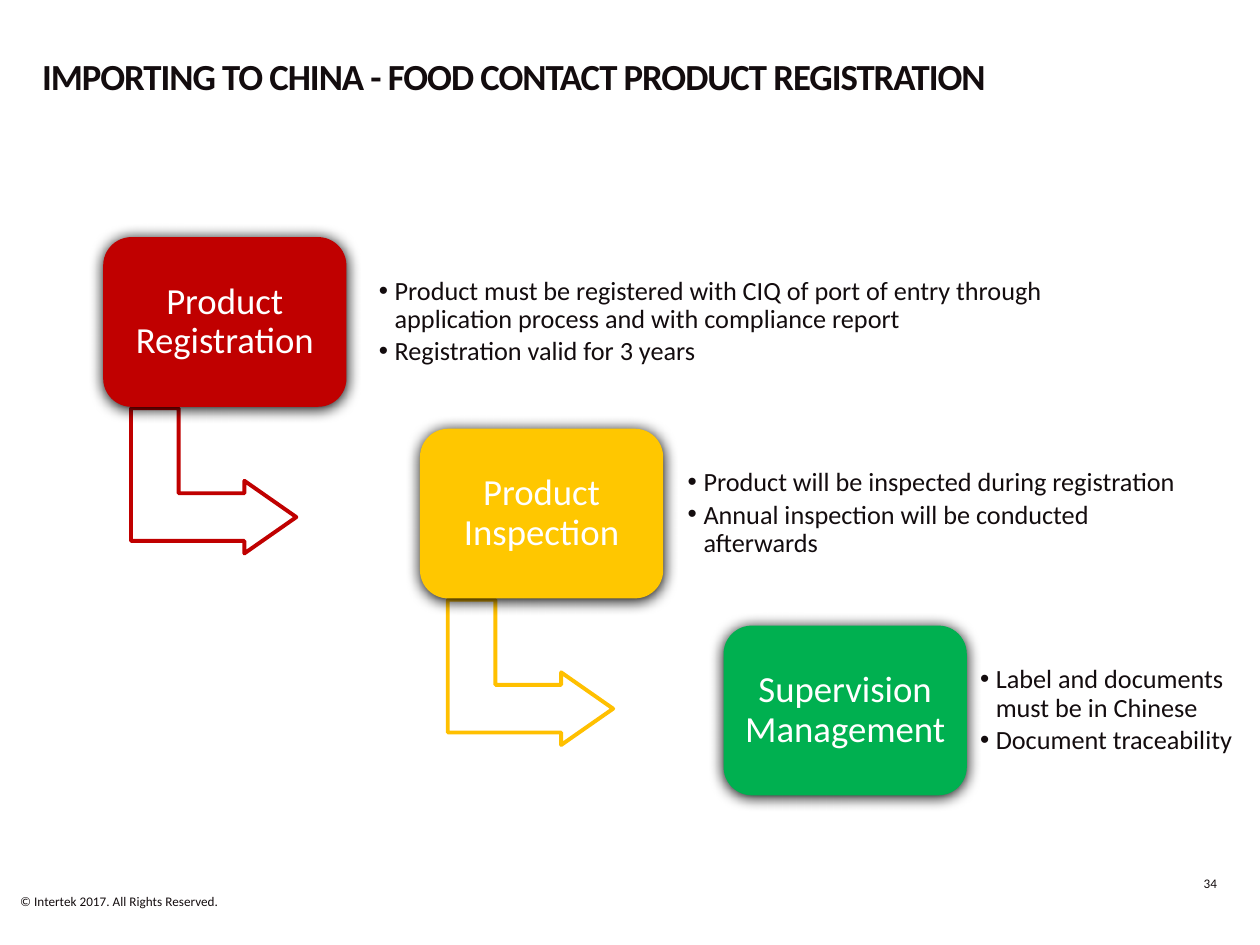
from lxml import etree
from pptx import Presentation
from pptx.dml.color import RGBColor
from pptx.enum.shapes import MSO_SHAPE
from pptx.enum.text import MSO_ANCHOR, MSO_AUTO_SIZE, PP_ALIGN
from pptx.oxml.ns import qn
from pptx.util import Pt

CARD, BENT = MSO_SHAPE.ROUNDED_RECTANGLE, MSO_SHAPE.BENT_UP_ARROW
TOP, MID = MSO_ANCHOR.TOP, MSO_ANCHOR.MIDDLE
LEFT, CENTER, RIGHT = PP_ALIGN.LEFT, PP_ALIGN.CENTER, PP_ALIGN.RIGHT
FIXED = MSO_AUTO_SIZE.NONE

# Content
TITLE = "IMPORTING TO CHINA - FOOD CONTACT PRODUCT REGISTRATION"
STEPS = [
    dict(name="Product Registration", fill="C00000", edge="C00000",
         at=(59, 135.5), list_x=211, list_w=440.5,
         points=["Product must be registered with CIQ of port of entry through "
                 "application process and with compliance report",
                 "Registration valid for 3 years"]),
    dict(name="Product Inspection", fill="FFC700", edge="FFC000",
         at=(240, 245), list_x=387.5, list_w=299,
         points=["Product will be inspected during registration",
                 "Annual inspection will be conducted afterwards"]),
    dict(name="Supervision Management", fill="00B050", edge=None,
         at=(413.5, 357.5), list_x=554.5, list_w=157.5,
         points=["Label and documents must be in Chinese",
                 "Document traceability"]),
]
NOTES = [  # text, box, alignment
    ("34", (651, 499.5, 44.5, 11), RIGHT),
    ("© Intertek 2017. All Rights Reserved.", (11.5, 510.5, 247, 9), LEFT),
]

# Measures and formats
INK, WHITE = "130C0E", "FFFFFF"
CARD_W, CARD_H, LIST_H = 139, 97, 78.5
BENT_DX, BENT_DY, BENT_W, BENT_H = 21.6, 92, 83, 94.5
HEAD = dict(size=Pt(21), bold=True)
LABEL = dict(size=Pt(21), bold=False)
BODY = dict(size=Pt(15), bold=False)
SMALL = dict(size=Pt(7.5), bold=False)


def color(hex_str):
    return RGBColor.from_string(hex_str)


def place(shape, box):
    for key, val in zip(("left", "top", "width", "height"), box):
        setattr(shape, key, Pt(val))


def write(shape, lines, form, ink=INK, align=LEFT, anchor=MID, pad=0,
          space=1.0, after=0, bullet=False):
    frame = shape.text_frame
    frame.auto_size, frame.word_wrap = FIXED, True
    frame.vertical_anchor = anchor
    for side in ("left", "top", "right", "bottom"):
        setattr(frame, "margin_" + side, Pt(pad))
    for i, line in enumerate(lines):
        para = frame.paragraphs[0] if i == 0 else frame.add_paragraph()
        if bullet:
            add_dot(para)
        para.alignment, para.line_spacing = align, space
        para.space_before, para.space_after = Pt(0), Pt(after)
        run = para.add_run()
        run.text = line
        run.font.name = "Calibri"
        run.font.color.rgb = color(ink)
        for key, val in form.items():
            setattr(run.font, key, val)


def add_dot(para):
    props = para._p.get_or_add_pPr()
    props.set("marL", str(Pt(9)))
    props.set("indent", str(-Pt(9)))
    etree.SubElement(props, qn("a:buFont")).set("typeface", "Arial")
    etree.SubElement(props, qn("a:buChar")).set("char", "•")


def add_glow(shape):
    shape.shadow.inherit = False
    effects = shape._element.spPr.find(qn("a:effectLst"))
    shade = etree.SubElement(effects, qn("a:outerShdw"), blurRad=str(Pt(8.5)),
                             dist=str(Pt(1)), dir="5400000", rotWithShape="0")
    etree.SubElement(shade, qn("a:srgbClr"), val="000000")


def add_bent(shapes, left, top, edge):
    bent = shapes.add_shape(BENT, Pt(left + BENT_DX), Pt(top + BENT_DY),
                            Pt(BENT_W), Pt(BENT_H))
    bent.rotation = 90
    for i, val in enumerate((0.328, 0.25, 0.358)):
        bent.adjustments[i] = val
    bent.shadow.inherit = False
    bent.fill.background()
    bent.line.color.rgb = color(edge)
    bent.line.width = Pt(2.25)


def add_card(shapes, left, top, step):
    card = shapes.add_shape(CARD, Pt(left), Pt(top), Pt(CARD_W), Pt(CARD_H))
    card.adjustments[0] = 0.167
    card.fill.solid()
    card.fill.fore_color.rgb = color(step["fill"])
    card.line.fill.background()
    add_glow(card)
    write(card, [step["name"]], LABEL, WHITE, CENTER, pad=6, space=0.9)


def main():
    deck = Presentation()
    deck.slide_width, deck.slide_height = Pt(720), Pt(540)
    slide = deck.slides.add_slide(deck.slide_layouts[4])
    shapes = slide.shapes
    title, *bodies = list(slide.placeholders)

    # Title
    place(title, (24, 35.5, 634, 57))
    write(title, [TITLE], HEAD, anchor=TOP, space=0.8)
    title.text_frame.paragraphs[0].runs[0]._r.get_or_add_rPr().set("spc", "-60")

    # Steps: arrow, card and list
    for step, body in zip(STEPS, bodies):
        left, top = step["at"]
        if step["edge"]:
            add_bent(shapes, left, top, step["edge"])
        add_card(shapes, left, top, step)
        place(body, (step["list_x"], top + (CARD_H - LIST_H) / 2,
                     step["list_w"], LIST_H))
        write(body, step["points"], BODY, pad=5.5, space=0.9, after=2.25,
              bullet=True)
    for spare in bodies[len(STEPS):]:
        spare._element.getparent().remove(spare._element)

    # Page number and copyright
    for text, box, align in NOTES:
        note = shapes.add_textbox(*map(Pt, box))
        write(note, [text], SMALL, align=align)

    deck.save("out.pptx")


if __name__ == "__main__":
    main()
